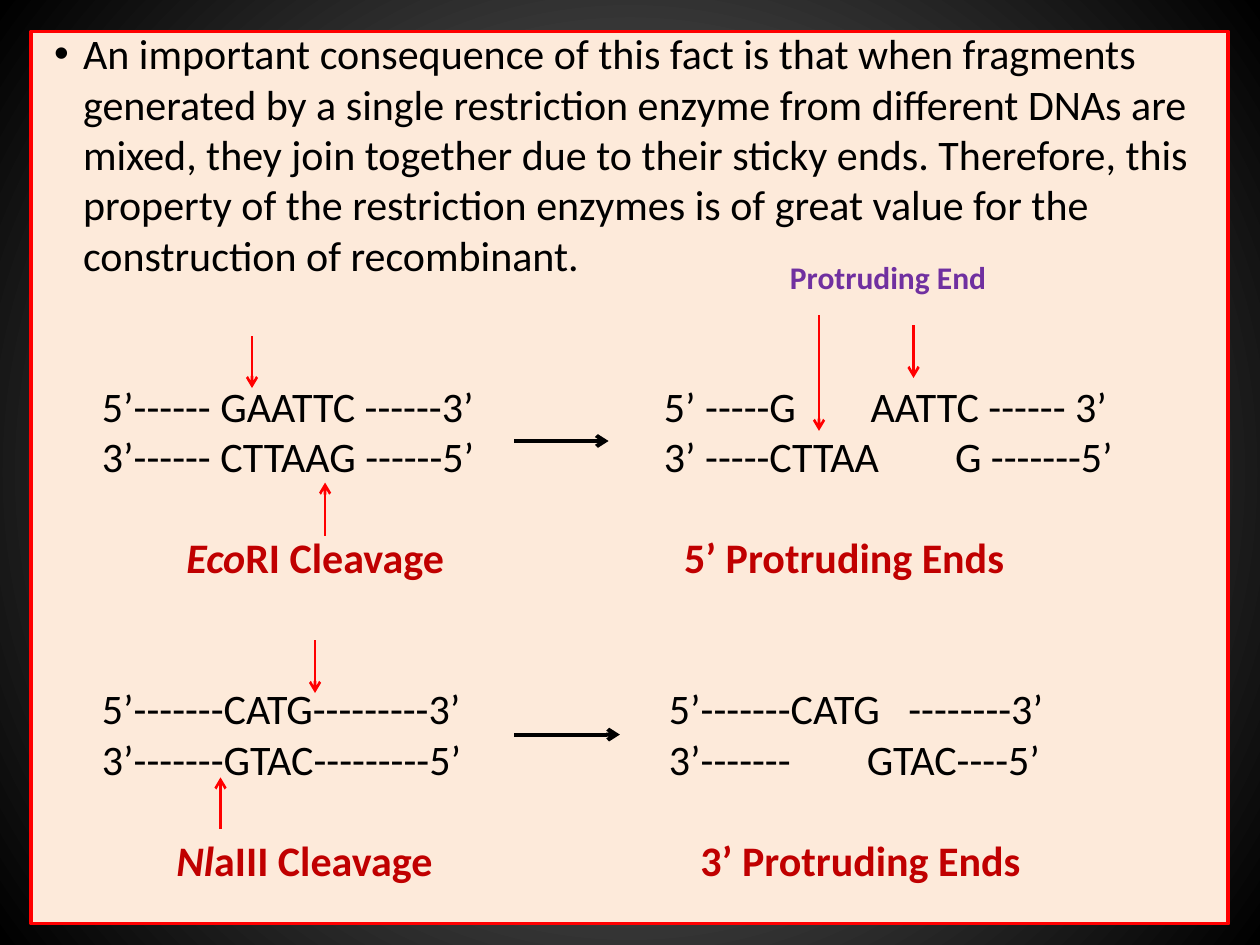
from lxml.etree import SubElement
from pptx import Presentation
from pptx.dml.color import RGBColor
from pptx.enum.shapes import MSO_CONNECTOR, MSO_SHAPE
from pptx.oxml import parse_xml
from pptx.oxml.ns import nsdecls, qn
from pptx.util import Inches, Pt

BLACK, RED, DARK_RED, PURPLE = "000000", "FF0000", "C00000", "7030A0"
TOP, ROW = 0.22, 0.4  # first text row and row pitch, inches

INTRO = ("An important consequence of this fact is that when fragments generated by "
         "a single restriction enzyme from different DNAs are mixed, they join together "
         "due to their sticky ends. Therefore, this property of the restriction enzymes "
         "is of great value for the construction of recombinant.")

# (row, left, text)
STRANDS = [
    (7, 0.81, "5’------ GAATTC ------3’"),
    (7, 5.27, "5’ -----G"),
    (7, 6.91, "AATTC ------ 3’"),
    (8, 0.81, "3’------ CTTAAG ------5’"),
    (8, 5.27, "3’ -----CTTAA"),
    (8, 7.58, "G -------5’"),
    (13, 0.81, "5’-------CATG---------3’"),
    (13, 5.31, "5’-------CATG"),
    (13, 7.21, "--------3’"),
    (14, 0.81, "3’-------GTAC---------5’"),
    (14, 5.31, "3’-------"),
    (14, 6.88, "GTAC----5’"),
]
# (row, left, italic part, upright part)
CAPTIONS = [
    (10, 1.48, "Eco", "RI Cleavage"),
    (10, 5.43, "", "5’ Protruding Ends"),
    (16, 1.40, "Nl", "aIII Cleavage"),
    (16, 5.56, "", "3’ Protruding Ends"),
]
# (x1, y1, x2, y2)
CUT_ARROWS = [
    (2, 2.67, 2, 3.08), (2.58, 4.25, 2.58, 3.83),
    (7.25, 2.58, 7.25, 3), (6.5, 2.5, 6.5, 3.42),
    (2.5, 5.08, 2.5, 5.5), (1.75, 6.58, 1.75, 6.17),
]
RESULT_ARROWS = [(4.08, 3.5, 4.83, 3.5), (4.08, 5.83, 4.92, 5.83)]


def rgb(value):
    return RGBColor.from_string(value)


def set_background(slide):
    """Radial gradient, grey in the centre and black at the edges."""
    fill = slide.background.fill
    fill.gradient()
    for stop, color in zip(fill.gradient_stops, ("7F7F7F", BLACK)):
        stop.color.rgb = rgb(color)
    grad = slide.background._cSld.find(".//" + qn("a:gradFill"))
    grad.replace(grad.find(qn("a:lin")), parse_xml(
        f'<a:path {nsdecls("a")} path="circle">'
        '<a:fillToRect l="50000" t="50000" r="50000" b="50000"/></a:path>'))


def add_text(slide, left, top, parts, width=3, color=BLACK, size=24, bold=False, wrap=False):
    """Add one paragraph made of (text, italic) parts and return it."""
    box = slide.shapes.add_textbox(Inches(left), Inches(top), Inches(width), Inches(ROW))
    tf = box.text_frame
    tf.word_wrap = wrap
    tf.margin_left = tf.margin_right = tf.margin_top = tf.margin_bottom = 0
    p = tf.paragraphs[0]
    for text, italic in parts:
        if text:
            r = p.add_run()
            r.text = text
            r.font.name, r.font.size = "Calibri", Pt(size)
            r.font.bold, r.font.italic = bold, italic
            r.font.color.rgb = rgb(color)
    return p


def add_bullet(p, indent):
    pPr = p._p.get_or_add_pPr()
    pPr.set("marL", str(Inches(indent)))
    pPr.set("indent", str(-Inches(indent)))
    SubElement(pPr, qn("a:buFont")).set("typeface", "Arial")
    SubElement(pPr, qn("a:buChar")).set("char", "•")


def add_arrow(slide, ends, color, weight):
    line = slide.shapes.add_connector(MSO_CONNECTOR.STRAIGHT, *map(Inches, ends))
    line.line.color.rgb = rgb(color)
    line.line.width = Pt(weight)
    SubElement(line.line._get_or_add_ln(), qn("a:tailEnd")).set("type", "arrow")
    SubElement(line._element.spPr, qn("a:effectLst"))


prs = Presentation()
prs.slide_width, prs.slide_height = Inches(10), Inches(7.5)
slide = prs.slides.add_slide(prs.slide_layouts[6])
set_background(slide)

panel = slide.shapes.add_shape(MSO_SHAPE.RECTANGLE, *map(Inches, (0.25, 0.25, 9.5, 7.08)))
panel.shadow.inherit = False
panel.fill.solid()
panel.fill.fore_color.rgb = rgb("FDEADA")
panel.line.color.rgb = rgb(RED)
panel.line.width = Pt(2.25)

intro = add_text(slide, 0.43, TOP, [(INTRO, False)], width=9.13, wrap=True)
intro.line_spacing = Pt(28.8)
add_bullet(intro, 0.23)

for row, left, text in STRANDS:
    add_text(slide, left, TOP + row * ROW, [(text, False)])
for row, left, italic, upright in CAPTIONS:
    add_text(slide, left, TOP + row * ROW, [(italic, True), (upright, False)],
             color=DARK_RED, bold=True)
add_text(slide, 6.27, 2.05, [("Protruding End", False)], width=1.57,
         color=PURPLE, size=18, bold=True)

for ends in CUT_ARROWS:
    add_arrow(slide, ends, RED, 1.5)
for ends in RESULT_ARROWS:
    add_arrow(slide, ends, BLACK, 2.25)

prs.save("out.pptx")
